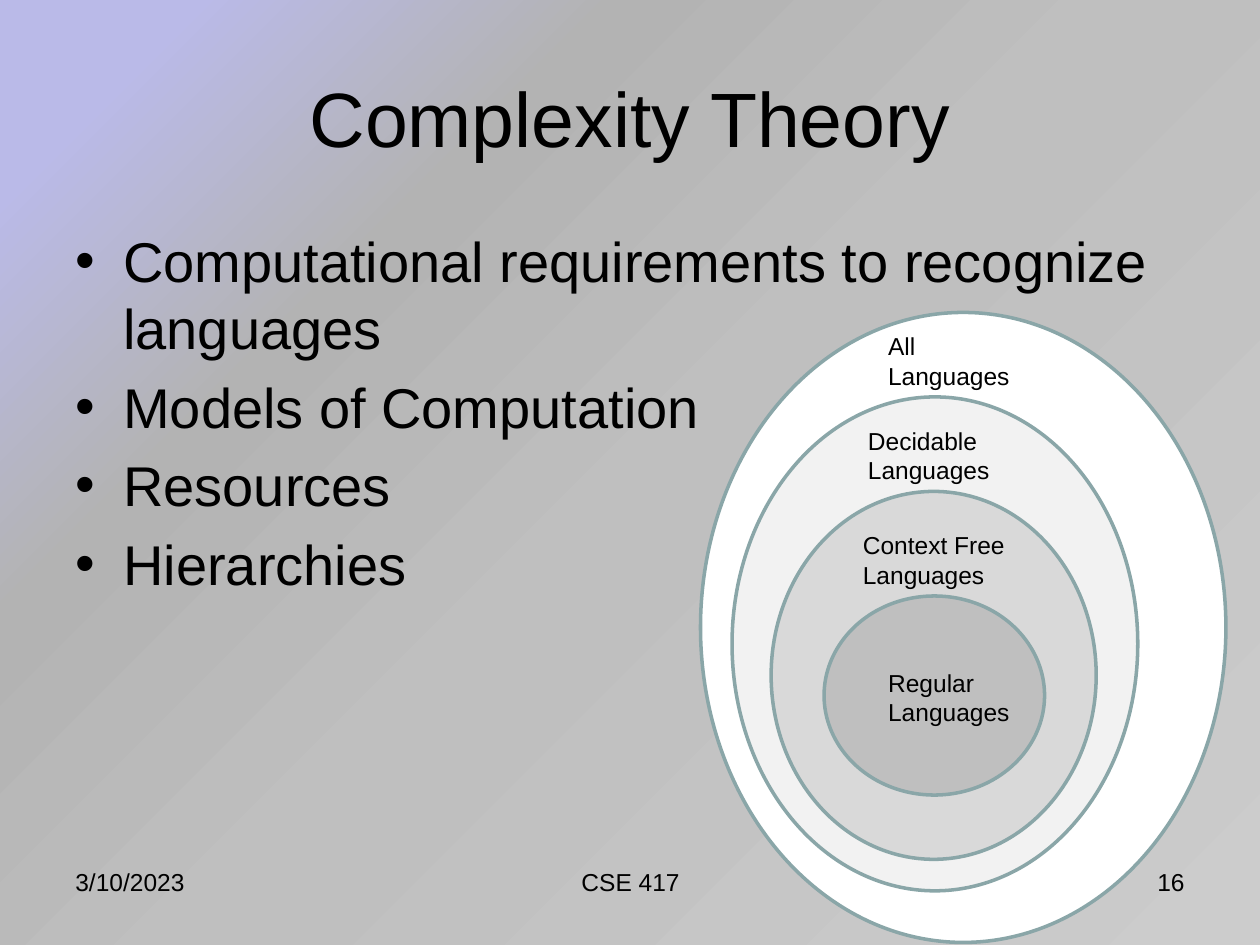
from lxml import etree
from pptx import Presentation
from pptx.dml.color import RGBColor
from pptx.enum.shapes import MSO_SHAPE
from pptx.enum.text import MSO_ANCHOR, PP_ALIGN
from pptx.oxml.ns import qn
from pptx.util import Inches, Pt

ELLIPSE = MSO_SHAPE.OVAL
TOP, MIDDLE = MSO_ANCHOR.TOP, MSO_ANCHOR.MIDDLE
LEFT, CENTER, RIGHT = PP_ALIGN.LEFT, PP_ALIGN.CENTER, PP_ALIGN.RIGHT

WIDTH, HEIGHT = 10, 7.5
COLUMNS, ROWS = 100, 75
COLORS = {
    "text": "000000",
    "outline": "8AA6A8",
    "all": "FFFFFF",
    "decidable": "F2F2F2",
    "context_free": "D9D9D9",
    "regular": "BFBFBF",
}
BACKGROUND_STOPS = [(0, "CCCCCC"), (48, "BFBFBF"), (72, "B3B3B3"), (91, "BABAE8")]
TOPICS = [
    "Computational requirements to recognize languages",
    "Models of Computation",
    "Resources",
    "Hierarchies",
]
LANGUAGE_CLASSES = [
    ("all", (55.6, 24.8, 41.7, 50)),
    ("decidable", (58.1, 31.5, 32.2, 39.2)),
    ("context_free", (61.2, 39, 25.8, 29.2)),
    ("regular", (65.4, 47.3, 17.5, 15.8)),
]
LABELS = [
    ("Regular Languages", (69.5, 52.5, 11.9, 5.7)),
    ("Context Free Languages", (67.5, 41.6, 13.3, 5.7)),
    ("Decidable Languages", (67.9, 33.3, 13.3, 5.7)),
    ("All Languages", (69.5, 25.8, 13.3, 5.7)),
]
FOOTERS = [
    ("3/10/2023", (5, 68.3, 23.3, 5.2), LEFT),
    ("CSE 417", (34.2, 68.3, 31.7, 5.2), CENTER),
    ("16", (71.7, 68.3, 23.3, 5.2), RIGHT),
]


class SlideBuilder:
    """Draws styled elements on the current slide, placed in grid columns and rows."""

    def __init__(self, slide, font="Arial"):
        self.slide = slide
        self.font = font

    def place(self, box):
        column, row, columns, rows = box
        cell_width, cell_height = WIDTH / COLUMNS, HEIGHT / ROWS
        return (
            Inches(column * cell_width),
            Inches(row * cell_height),
            Inches(columns * cell_width),
            Inches(rows * cell_height),
        )

    def background(self, stops):
        fill = self.slide.background.fill
        fill.gradient()
        gradient = self.slide.element.find(".//" + qn("a:gradFill"))
        for child in list(gradient):
            gradient.remove(child)
        stop_list = etree.SubElement(gradient, qn("a:gsLst"))
        for position, color in stops:
            stop = etree.SubElement(stop_list, qn("a:gs"), pos=str(position * 1000))
            etree.SubElement(stop, qn("a:srgbClr"), val=color)
        circle = etree.SubElement(gradient, qn("a:path"), path="circle")
        etree.SubElement(circle, qn("a:fillToRect"), l="100000", t="100000")

    def text(self, paragraphs, box, size=14, align=LEFT, anchor=TOP, bullets=False):
        frame = self.slide.shapes.add_textbox(*self.place(box)).text_frame
        frame.word_wrap = True
        frame.vertical_anchor = anchor
        for index, wording in enumerate(paragraphs):
            paragraph = frame.add_paragraph() if index else frame.paragraphs[0]
            paragraph.alignment = align
            if bullets:
                paragraph.space_before = Pt(size * 0.2)
                self.bullet(paragraph)
            run = paragraph.add_run()
            run.text = wording
            run.font.name = self.font
            run.font.size = Pt(size)
            run.font.color.rgb = RGBColor.from_string(COLORS["text"])

    def bullet(self, paragraph, indent=0.38):
        properties = paragraph._p.get_or_add_pPr()
        properties.set("marL", str(Inches(indent)))
        properties.set("indent", str(-Inches(indent)))
        etree.SubElement(properties, qn("a:buFont"), typeface=self.font)
        etree.SubElement(properties, qn("a:buChar"), char="•")

    def ellipse(self, box, color):
        shape = self.slide.shapes.add_shape(ELLIPSE, *self.place(box))
        shape.shadow.inherit = False
        shape.fill.solid()
        shape.fill.fore_color.rgb = RGBColor.from_string(COLORS[color])
        shape.line.color.rgb = RGBColor.from_string(COLORS["outline"])
        shape.line.width = Pt(2)


def main():
    presentation = Presentation()
    presentation.slide_width, presentation.slide_height = Inches(WIDTH), Inches(HEIGHT)
    builder = SlideBuilder(presentation.slides.add_slide(presentation.slide_layouts[6]))
    builder.background(BACKGROUND_STOPS)
    builder.text(["Complexity Theory"], (5, 3, 90, 12.5), 44, CENTER, MIDDLE)
    builder.text(TOPICS, (5, 17.5, 90, 49.5), 32, bullets=True)
    for wording, box, align in FOOTERS:
        builder.text([wording], box, align=align)
    for color, box in LANGUAGE_CLASSES:
        builder.ellipse(box, color)
    for wording, box in LABELS:
        builder.text([wording], box)
    presentation.save("out.pptx")


if __name__ == "__main__":
    main()
